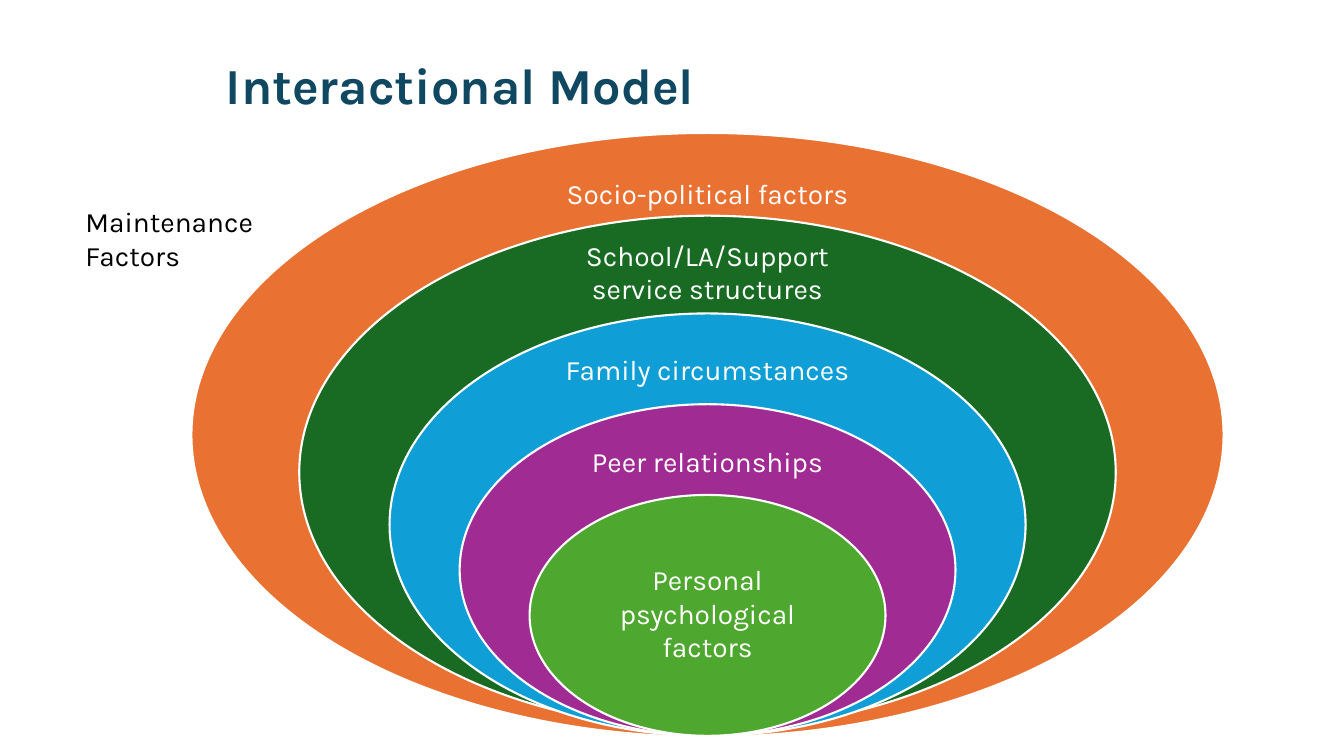
from pptx import Presentation
from pptx.dml.color import RGBColor
from pptx.enum.shapes import MSO_SHAPE
from pptx.enum.text import MSO_ANCHOR, MSO_AUTO_SIZE, PP_ALIGN
from pptx.util import Pt

FONT = "Karla"
COLORS = {
    "title": "104862",
    "black": "000000",
    "white": "FFFFFF",
    "orange": "E97132",
    "dark_green": "196B24",
    "blue": "0F9ED5",
    "purple": "A02B93",
    "light_green": "4EA72E",
}
CENTER = 505.4
OUTER_HEIGHT = 431.3
HEIGHT_STEP = 64.8
LABEL_INSET = 11.5
LAYERS = [
    ("Socio-political factors", "orange", 95, 737.3, (116.6, 276, 43)),
    ("School/LA/Support service structures", "dark_green", 154.1, 583.2, (172.6, 252, 43)),
    ("Family circumstances", "blue", 223.9, 454.3, (242.6, 235, 43)),
    ("Peer relationships", "purple", 288.7, 354.2, (307.8, 192, 43)),
    ("Personal psychological factors", "light_green", 353.5, 254.2, (394.7, 180, 86.4)),
]


def color(name):
    return RGBColor.from_string(COLORS[name])


def add_text(frame, text, size, color_name, alignment=PP_ALIGN.LEFT, bold=False):
    frame.word_wrap = True
    paragraph = frame.paragraphs[0]
    paragraph.alignment = alignment
    paragraph.line_spacing = 1.0
    paragraph.space_before = Pt(0)
    run = paragraph.add_run()
    run.text = text
    run.font.name = FONT
    run.font.size = Pt(size)
    run.font.bold = bold
    run.font.color.rgb = color(color_name)


def place_title(slide, left, top, width, height):
    title = slide.shapes.title
    title.left, title.top, title.width, title.height = map(Pt, (left, top, width, height))
    frame = title.text_frame
    frame.auto_size = MSO_AUTO_SIZE.NONE
    frame.vertical_anchor = MSO_ANCHOR.TOP
    add_text(frame, "Interactional Model", 36, "title", bold=True)


def add_caption(slide, left, top, width, height):
    caption = slide.shapes.add_textbox(Pt(left), Pt(top), Pt(width), Pt(height))
    add_text(caption.text_frame, "Maintenance Factors", 20, "black")


def add_layer(slide, center, top, width, height, fill):
    ellipse = slide.shapes.add_shape(
        MSO_SHAPE.OVAL, Pt(center - width / 2), Pt(top), Pt(width), Pt(height)
    )
    ellipse.shadow.inherit = False
    ellipse.fill.solid()
    ellipse.fill.fore_color.rgb = color(fill)
    ellipse.line.color.rgb = color("white")
    ellipse.line.width = Pt(1.5)


def add_label(slide, center, top, width, height, text):
    label = slide.shapes.add_textbox(
        Pt(center - width / 2), Pt(top), Pt(width), Pt(height)
    )
    frame = label.text_frame
    frame.margin_left = frame.margin_right = Pt(LABEL_INSET)
    frame.margin_top = frame.margin_bottom = Pt(0)
    frame.vertical_anchor = MSO_ANCHOR.MIDDLE
    add_text(frame, text, 20, "white", PP_ALIGN.CENTER)


def add_model(slide, center, outer_height):
    for index, (text, fill, top, width, label_box) in enumerate(LAYERS):
        add_layer(slide, center, top, width, outer_height - index * HEIGHT_STEP, fill)
        add_label(slide, center, *label_box, text)


def main():
    presentation = Presentation()
    presentation.slide_width = Pt(960)
    presentation.slide_height = Pt(540)
    slide = presentation.slides.add_slide(presentation.slide_layouts[5])
    place_title(slide, 154, 34.8, 640, 60)
    add_model(slide, CENTER, OUTER_HEIGHT)
    add_caption(slide, 54, 142.6, 152, 55.4)
    presentation.save("out.pptx")


if __name__ == "__main__":
    main()
